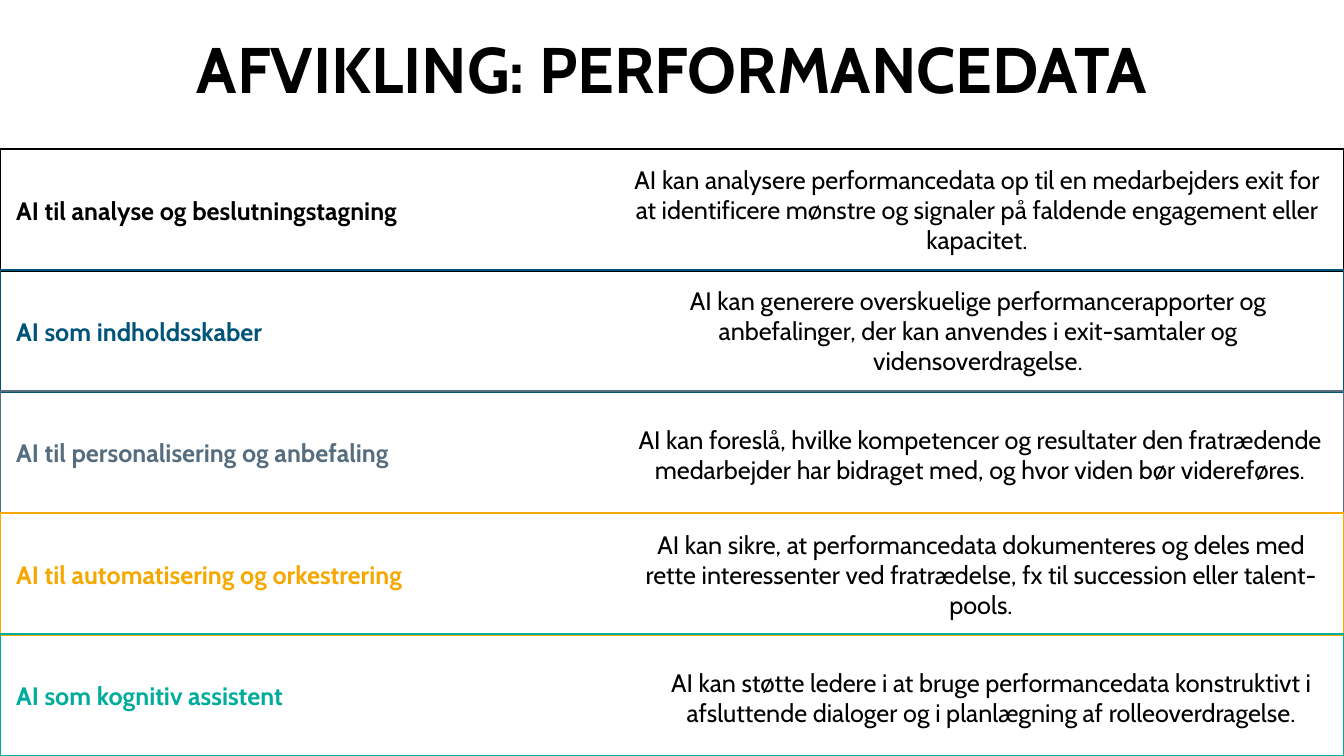
from pptx import Presentation
from pptx.dml.color import RGBColor
from pptx.enum.shapes import MSO_SHAPE
from pptx.enum.text import MSO_ANCHOR, MSO_AUTO_SIZE, PP_ALIGN
from pptx.util import Emu, Pt

RECTANGLE = MSO_SHAPE.RECTANGLE
MIDDLE = MSO_ANCHOR.MIDDLE
NO_AUTOFIT = MSO_AUTO_SIZE.NONE
LEFT, CENTER = PP_ALIGN.LEFT, PP_ALIGN.CENTER

BLACK = RGBColor(0x00, 0x00, 0x00)
BLUE = RGBColor(0x00, 0x54, 0x7A)
SLATE = RGBColor(0x55, 0x6D, 0x7E)
AMBER = RGBColor(0xF6, 0xA8, 0x00)
TEAL = RGBColor(0x00, 0xAC, 0x9C)

EMU_PER_PX = 9144
SLIDE_WIDTH, SLIDE_HEIGHT = 1333, 750
TITLE_HEIGHT = 134
FIRST_BAND_TOP, BAND_PITCH, BAND_HEIGHT = 148, 120.25, 121
LABEL_INDENT = 16
USE_WIDTH, USE_HEIGHT = 700, 120

AI_ROLES = [
    ("AI til analyse og beslutningstagning", BLACK, (619, 148),
     "AI kan analysere performancedata op til en medarbejders exit for at identificere "
     "mønstre og signaler på faldende engagement eller kapacitet."),
    ("AI som indholdsskaber", BLUE, (620, 268),
     "AI kan generere overskuelige performancerapporter og anbefalinger, der kan "
     "anvendes i exit-samtaler og vidensoverdragelse."),
    ("AI til personalisering og anbefaling", SLATE, (622, 391),
     "AI kan foreslå, hvilke kompetencer og resultater den fratrædende medarbejder "
     "har bidraget med, og hvor viden bør videreføres."),
    ("AI til automatisering og orkestrering", AMBER, (623, 510),
     "AI kan sikre, at performancedata dokumenteres og deles med rette interessenter "
     "ved fratrædelse, fx til succession eller talent-pools."),
    ("AI som kognitiv assistent", TEAL, (633, 632),
     "AI kan støtte ledere i at bruge performancedata konstruktivt i afsluttende "
     "dialoger og i planlægning af rolleoverdragelse."),
]


def px(length):
    """Turn a length in px into EMU."""
    return Emu(length * EMU_PER_PX)


class SlideBuilder:
    """Hold the text style and the current slide."""

    font = "Cabin"
    body_size = 18
    title_size = 46
    line_width = 1.5

    def __init__(self, slide):
        """Keep the slide to draw on."""
        self.slide = slide

    def set_text(self, holder, text, size, color, bold=False, align=CENTER):
        """Set one vertically centred paragraph."""
        frame = holder.text_frame
        frame.word_wrap = True
        frame.auto_size = NO_AUTOFIT
        frame.vertical_anchor = MIDDLE
        paragraph = frame.paragraphs[0]
        paragraph.alignment = align
        run = paragraph.add_run()
        run.text = text
        run.font.name = self.font
        run.font.size = Pt(size)
        run.font.bold = bold
        run.font.color.rgb = color

    def title(self, text):
        """Fill the title placeholder across the slide top."""
        heading = self.slide.shapes.title
        heading.left, heading.top = px(0), px(0)
        heading.width, heading.height = px(SLIDE_WIDTH), px(TITLE_HEIGHT)
        self.set_text(heading, text, self.title_size, BLACK, bold=True)

    def band(self, top, label, color):
        """Draw an outlined full-width band with its label."""
        band = self.slide.shapes.add_shape(
            RECTANGLE, px(0), px(top), px(SLIDE_WIDTH), px(BAND_HEIGHT))
        band.shadow.inherit = False
        band.fill.background()
        band.line.color.rgb = color
        band.line.width = Pt(self.line_width)
        band.text_frame.margin_left = px(LABEL_INDENT)
        self.set_text(band, label, self.body_size, color, bold=True, align=LEFT)

    def use(self, left, top, text):
        """Add the centred description of a use."""
        box = self.slide.shapes.add_textbox(
            px(left), px(top), px(USE_WIDTH), px(USE_HEIGHT))
        self.set_text(box, text, self.body_size, BLACK)


def main():
    """Build and save the slide."""
    deck = Presentation()
    deck.slide_width, deck.slide_height = px(SLIDE_WIDTH), px(SLIDE_HEIGHT)
    title_only = deck.slide_layouts.get_by_name("Title Only")
    builder = SlideBuilder(deck.slides.add_slide(title_only))

    builder.title("AFVIKLING: PERFORMANCEDATA")
    for row, (label, color, (left, top), use) in enumerate(AI_ROLES):
        builder.band(round(FIRST_BAND_TOP + row * BAND_PITCH), label, color)
        builder.use(left, top, use)

    deck.save("out.pptx")


if __name__ == "__main__":
    main()
